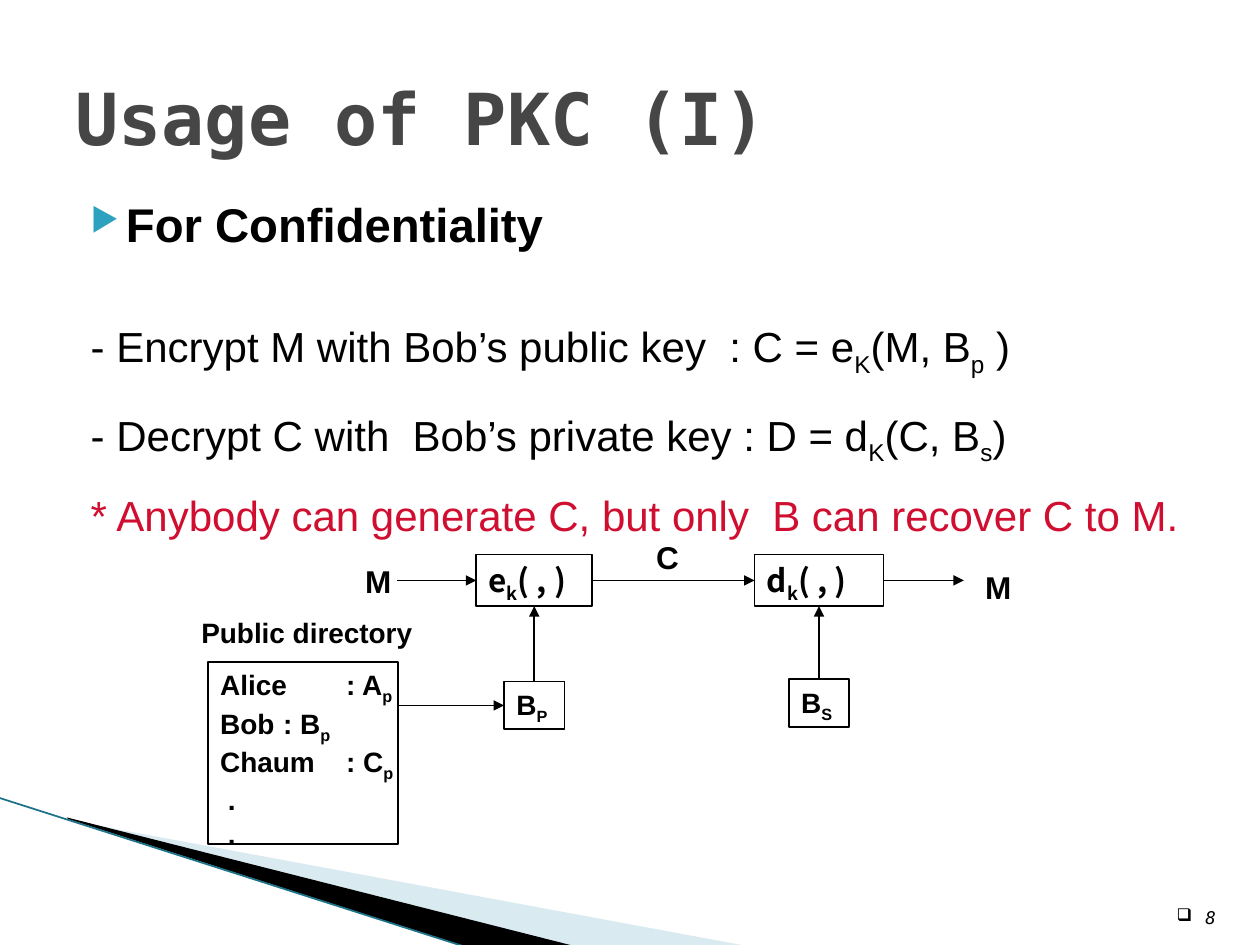
from lxml import etree
from pptx import Presentation
from pptx.dml.color import RGBColor
from pptx.enum.shapes import MSO_CONNECTOR, MSO_SHAPE
from pptx.enum.text import MSO_ANCHOR, PP_ALIGN
from pptx.oxml.ns import qn
from pptx.util import Cm, Pt

LINE = MSO_CONNECTOR.STRAIGHT
RECT = MSO_SHAPE.RECTANGLE
TOP, MID, LOW = MSO_ANCHOR.TOP, MSO_ANCHOR.MIDDLE, MSO_ANCHOR.BOTTOM
LEFT, RIGHT = PP_ALIGN.LEFT, PP_ALIGN.RIGHT
NORTH, WEST, SOUTH, EAST = range(4)
SANS, MONO, CJK = "Arial", "DejaVu Sans Mono", "Noto Sans CJK KR"
BLACK, GREY, RED = "000000", "464646", "CF0E30"
PALE, TEAL, BLUE = "A0CBDC", "1C7388", "2DA2BF"


def paint(code):
    """Turn a hex string into a colour."""
    return RGBColor.from_string(code)


def node(parent, tag, **attrs):
    """Append a drawing element with its attributes."""
    return etree.SubElement(parent, qn(tag), {k: str(v) for k, v in attrs.items()})


def write(frame, text, size=16, font=SANS, color=BLACK, bold=True, slant=False,
          align=LEFT, before=0, space=None, left=0, hang=0, mark=None, scale=100,
          tint=BLACK, tab=None):
    """Add a paragraph in which every second part between bars is a subscript."""
    para = frame.paragraphs[0]
    if para.runs:
        para = frame.add_paragraph()
    para.alignment = align
    para.space_before = Pt(before)
    if space:
        para.line_spacing = space
    props = para._p.get_or_add_pPr()
    props.set("marL", str(Cm(left)))
    props.set("indent", str(Cm(hang)))
    if mark:
        node(node(props, "a:buClr"), "a:srgbClr", val=tint)
        node(props, "a:buSzPct", val=scale * 1000)
        node(props, "a:buChar", char=mark)
    else:
        node(props, "a:buNone")
    if tab:
        node(node(props, "a:tabLst"), "a:tab", pos=Cm(tab), algn="l")
    for i, part in enumerate(text.split("|")):
        if not part:
            continue
        run = para.add_run()
        run.text = part
        face = run.font
        face.size, face.name = Pt(size), font
        face.bold, face.italic = bold, slant
        face.color.rgb = paint(color)
        if i % 2:
            face._element.set("baseline", "-25000")


class Deck:
    """Hold the style and the current slide."""

    def __init__(self):
        """Open a deck with one blank slide."""
        self.file = Presentation()
        self.file.slide_width, self.file.slide_height = Cm(25.4), Cm(19.05)
        self.slide = self.file.slides.add_slide(self.file.slide_layouts[6])
        self.shapes = self.slide.shapes
        self.ink, self.width = BLACK, 1

    def text(self, x, y, w, h, anchor=TOP, wrap=True):
        """Add a text box and return its frame."""
        frame = self.shapes.add_textbox(Cm(x), Cm(y), Cm(w), Cm(h)).text_frame
        frame.word_wrap, frame.vertical_anchor = wrap, anchor
        return frame

    def label(self, text, x, y, w, h, **style):
        """Add a short line of text on its own."""
        write(self.text(x, y, w, h, wrap=False), text, **style)

    def box(self, lines, x, y, w, h, **style):
        """Add an outlined rectangle with lines of text."""
        shape = self.shapes.add_shape(RECT, Cm(x), Cm(y), Cm(w), Cm(h))
        shape.shadow.inherit = False
        shape.fill.background()
        shape.line.color.rgb = paint(self.ink)
        shape.line.width = Pt(self.width)
        frame = shape.text_frame
        frame.word_wrap, frame.vertical_anchor = False, TOP
        for line in lines:
            write(frame, line, **style)
        return shape

    def line(self, start, end, color=None, head=True):
        """Draw a line between points or (shape, side) pairs."""
        link = self.shapes.add_connector(LINE, 0, 0, 0, 0)
        if isinstance(start[0], float):
            link.begin_x, link.begin_y = map(Cm, start)
        else:
            link.begin_connect(*start)
        if isinstance(end[0], float):
            link.end_x, link.end_y = map(Cm, end)
        else:
            link.end_connect(*end)
        link.line.color.rgb = paint(color or self.ink)
        link.line.width = Pt(self.width)
        if head:
            node(link.line._get_or_add_ln(), "a:tailEnd", type="triangle")
        node(link._element.spPr, "a:effectLst")

    def wedge(self, points, color, alpha=100):
        """Draw a filled outline through the points."""
        first, *rest = [(Cm(x), Cm(y)) for x, y in points]
        pen = self.shapes.build_freeform(*first)
        pen.add_line_segments(rest)
        shape = pen.convert_to_shape()
        shape.shadow.inherit = False
        shape.line.fill.background()
        shape.fill.solid()
        shape.fill.fore_color.rgb = paint(color)
        tone = shape._element.spPr.find(".//" + qn("a:srgbClr"))
        node(tone, "a:alpha", val=alpha * 1000)


def main():
    """Build the slide and save it."""
    deck = Deck()
    deck.wedge([(1.4, 16.54), (15.11, 19.08), (11.58, 19.08), (1.4, 16.51)], PALE, 40)
    deck.wedge([(1.35, 16.48), (11.61, 19.08), (9.45, 19.1), (1.37, 16.51)], BLACK)
    deck.line((-0.03, 16.08), (9.42, 19.1), color=TEAL, head=False)

    write(deck.text(1.27, 0.76, 22.86, 3.18, MID), "Usage of PKC (I)",
          size=41, font=MONO, color=GREY)
    body = deck.text(1.27, 3.82, 22.86, 12.43)
    dent = {"left": 1.02, "hang": -0.71}
    write(body, "For Confidentiality", size=27, mark="▶", scale=68, tint=BLUE, **dent)
    for text, gap, color in (
        ("- Encrypt M with Bob’s public key  : C = e|K|(M, B|p| )", 42, BLACK),
        ("- Decrypt C with  Bob’s private key : D = d|K|(C, B|s|)", 24.5, BLACK),
        ("* Anybody can generate C, but only  B can recover C to M.", 22, RED),
    ):
        write(body, text, size=24, bold=False, color=color, before=gap, space=0.8, **dent)
    write(deck.text(23.39, 17.81, 1.37, 1.02, LOW), "8", size=10, font=MONO,
          bold=False, slant=True, align=RIGHT, mark="❑", left=0.58, hang=-0.58)

    lock = deck.box(["e|k|( , )"], 9.6, 11.18, 2.34, 1.04, size=18, font=CJK)
    open_ = deck.box(["d|k|( , )"], 15.21, 11.18, 2.6, 1.04, size=18, font=CJK)
    public = deck.box(["B|P|"], 10.16, 13.74, 1.22, 0.96)
    secret = deck.box(["B|S|"], 15.9, 13.69, 1.22, 0.96)
    deck.box(["Alice\t: A|p|", "Bob\t: B|p|", "Chaum\t: C|p|", " .", " ."],
             4.19, 13.34, 3.84, 3.68, tab=2.24)
    for text, x, y in (("M", 7.11, 11.2), ("C", 12.98, 10.72), ("M", 19.61, 11.33)):
        deck.label(text, x, y, 1.04, 1.02, size=18)
    deck.label("Public directory", 3.81, 12.29, 4.78, 0.94)

    for start, end in (
        ((8.0, 11.7), (lock, WEST)),
        ((lock, EAST), (open_, WEST)),
        ((open_, EAST), (19.43, 11.7)),
        ((public, NORTH), (lock, SOUTH)),
        ((secret, NORTH), (open_, SOUTH)),
        ((8.03, 14.22), (public, WEST)),
    ):
        deck.line(start, end)
    deck.file.save("out.pptx")


if __name__ == "__main__":
    main()
